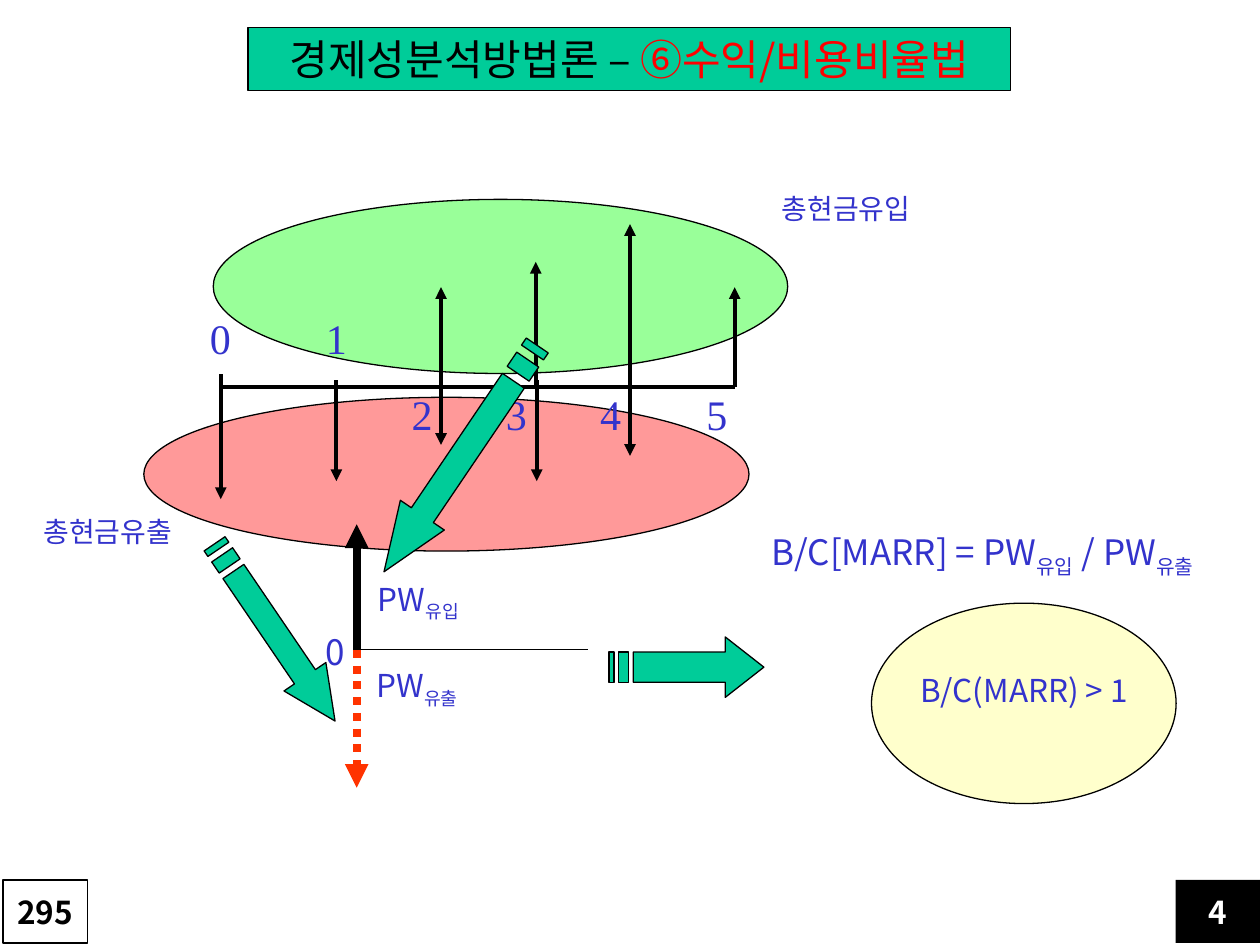
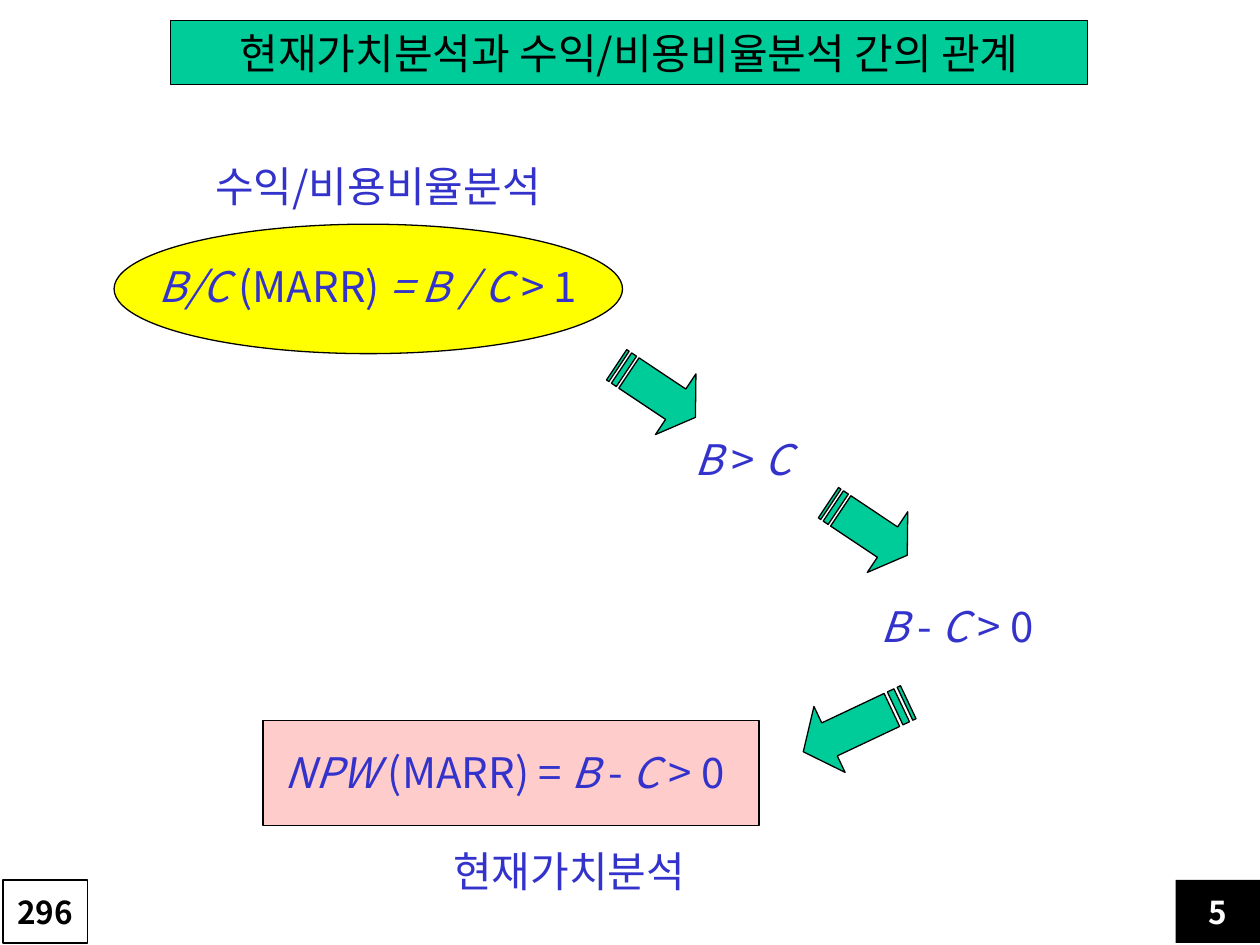
import lxml.etree
import pptx
import pptx.dml.color
import pptx.enum.dml
import pptx.enum.shapes
import pptx.enum.text
import pptx.oxml.ns
import pptx.util

Cm = pptx.util.Cm
Pt = pptx.util.Pt
qn = pptx.oxml.ns.qn
color = pptx.dml.color.RGBColor.from_string
SHAPE = pptx.enum.shapes.MSO_SHAPE
ANCHOR = pptx.enum.text.MSO_ANCHOR
ALIGN = pptx.enum.text.PP_ALIGN

theme = {
    "font": "Noto Sans CJK KR", "digit_font": "Times New Roman",
    "black": "000000", "white": "FFFFFF", "text": "3333CC", "accent": "00CC99",
    "highlight": "FF0000", "outflow_arrow": "FF3300", "inflow": "99FF99",
    "outflow": "FF9999", "result": "FFFFCC", "ratio": "FFFF00", "worth": "FFCCCC",
    "large": 24, "formula": 20, "body": 18, "label": 16,
    "hairline": 0.75, "cash_line": 2.25, "worth_line": 4.5,
}


def write(shape, spans, size, ink="text", font="font", bold=False,
          align=ALIGN.LEFT, anchor=ANCHOR.TOP, tabs=()):
    frame = shape.text_frame
    settings = {"word_wrap": True, "auto_size": pptx.enum.text.MSO_AUTO_SIZE.NONE,
                "vertical_anchor": anchor,
                "margin_right": Cm(0 if align == ALIGN.LEFT else 0.25)}
    for name, value in settings.items():
        setattr(frame, name, value)
    para = frame.paragraphs[0]
    para.alignment = align
    if tabs:
        stops = lxml.etree.SubElement(para._p.get_or_add_pPr(), qn("a:tabLst"))
        for stop in tabs:
            lxml.etree.SubElement(stops, qn("a:tab"), pos=str(Cm(stop)), algn="l")
    for text, mark in spans:
        span = para.add_run()
        span.text = text
        formats = {"name": theme[font], "size": Pt(theme[size]),
                   "bold": bold, "italic": mark == "italic"}
        for name, value in formats.items():
            setattr(span.font, name, value)
        span.font.color.rgb = color(theme["highlight" if mark == "highlight" else ink])
        properties = span._r.get_or_add_rPr()
        lxml.etree.SubElement(properties, qn("a:ea"), typeface=theme[font])
        if mark == "sub":
            properties.set("baseline", "-25000")


def paint(shape, fill, outlined=True):
    shape.shadow.inherit = False
    shape.fill.solid()
    shape.fill.fore_color.rgb = color(theme[fill])
    if outlined:
        shape.line.color.rgb = color(theme["black"])
        shape.line.width = Pt(theme["hairline"])
    else:
        shape.line.fill.background()


axis_y = 7.8
worth_x, worth_y = 7.19, 13.1
cash_flows = [(4.45, axis_y, 14.81, axis_y, False)]
for x, tip in [(8.89, 5.79), (10.8, 5.28), (12.7, 4.52), (14.81, 5.79)]:
    cash_flows.append((x, axis_y, x, tip, True))
for x, start, tip in [(4.45, 7.54, 10.06), (6.78, 7.67, 9.7), (8.89, 7.67, 8.97),
                      (10.82, 7.67, 9.7), (12.7, 7.67, 9.19)]:
    cash_flows.append((x, start, x, tip, True))
lines = [(*flow, "cash_line", "black") for flow in cash_flows] + [
    (worth_x, worth_y, worth_x, 10.57, True, "worth_line", "black"),
    (worth_x, worth_y, worth_x, 15.88, True, "worth_line", "outflow_arrow"),
    (worth_x, worth_y, 11.86, worth_y, False, "hairline", "black"),
]

digits = {"size": "large", "font": "digit_font"}
large, body, label = {"size": "large"}, {"size": "body"}, {"size": "label"}
B, C = ("B", "italic"), ("C", "italic")

slides = [
    {
        "title": [("경제성분석방법론 – ", ""), ("⑥수익/비용비율법", "highlight")],
        "title_at": (5, 0.55, 15.37, 1.28),
        "numbers": ("295", "4"),
        "shapes": [
            (SHAPE.OVAL, "inflow", (4.3, 4.02, 11.58, 3.51)),
            (SHAPE.OVAL, "outflow", (2.9, 8.01, 12.2, 3.1)),
            (SHAPE.OVAL, "result", (17.57, 12.16, 6.14, 4.04)),
        ],
        "lines": lines,
        "texts": [
            ((8.05, 7.7, 7.2, 1.52), [("2\t3\t4\t5", "")],
             {**digits, "tabs": (1.9, 3.8, 5.94)}),
            ((3.98, 6.17, 3.6, 1.52), [("0\t1", "")], {**digits, "tabs": (2.34,)}),
            ((15.51, 3.73, 3.35, 1.12), [("총현금유입", "")], label),
            ((0.63, 10.24, 3.35, 1.12), [("총현금유출", "")], label),
            ((6.32, 12.58, 0.91, 1.32), [("0", "")], {"size": "formula"}),
            ((7.37, 11.56, 2.31, 1.22), [("PW", ""), ("유입", "sub")], body),
            ((7.34, 13.31, 2.31, 1.22), [("PW", ""), ("유출", "sub")], body),
            ((15.3, 10.57, 9.8, 2.34),
             [("B/C[MARR] = PW", ""), ("유입", "sub"), (" / PW", ""), ("유출", "sub")],
             {"size": "formula"}),
            ((18.3, 13.41, 4.83, 1.22), [("B/C(MARR) > 1", "")], body),
        ],
        "arrows": [(6.53, 8.71, 5.51, 1.07, 124.1), (3.38, 12.24, 4.32, 1.02, 55.8),
                   (12.28, 12.84, 3.12, 1.22, 0)],
    },
    {
        "title": [("현재가치분석과 수익/비용비율분석 간의 관계", "")],
        "title_at": (3.43, 0.42, 18.5, 1.28),
        "numbers": ("296", "5"),
        "shapes": [
            (SHAPE.RECTANGLE, "worth", (5.3, 14.53, 10, 2.11)),
            (SHAPE.OVAL, "ratio", (2.3, 4.52, 10.25, 2.61)),
        ],
        "lines": [],
        "texts": [
            ((13.76, 8.61, 2.54, 1.3), [B, (" > ", ""), C], large),
            ((17.5, 11.99, 4.11, 1.3), [B, (" - ", ""), C, (" > 0", "")], large),
            ((5.49, 14.92, 9.8, 1.3),
             [("NPW ", "italic"), ("(MARR) = ", ""), B, (" - ", ""), C, (" > 0", "")], large),
            ((2.95, 5.13, 9.35, 1.3),
             [("B/C ", "italic"), ("(MARR)", ""), (" = B / C", "italic"), (" > 1", "")], large),
            ((4.09, 3.12, 7.95, 1.27), [("수익/비용비율분석", "")], large),
            ((8.89, 16.92, 5.64, 1.3), [("현재가치분석", "")], large),
        ],
        "arrows": [(12.27, 7.15, 1.91, 1.47, 33.7), (16.54, 9.93, 1.91, 1.47, 33.7),
                   (16.08, 13.92, 2.34, 1.47, 154.7)],
    },
]

arrow_head = [(5 / 32, 0.25), (0.75, 0.25), (0.75, 0), (1, 0.5),
              (0.75, 1), (0.75, 0.75), (5 / 32, 0.75)]
stripes = [[(start, 0.25), (end, 0.25), (end, 0.75), (start, 0.75)]
           for start, end in [(1 / 16, 1 / 8), (0, 1 / 32)]]

deck = pptx.Presentation()
deck.slide_width, deck.slide_height = Cm(25.4), Cm(19.05)

for content in slides:
    page = deck.slides.add_slide(deck.slide_layouts[5])

    title = page.shapes.title
    for name, value in zip(("left", "top", "width", "height"), content["title_at"]):
        setattr(title, name, Cm(value))
    paint(title, "accent")
    write(title, content["title"], "large", ink="black", align=ALIGN.CENTER)

    for kind, fill, place in content["shapes"]:
        paint(page.shapes.add_shape(kind, *map(Cm, place)), fill)

    for x1, y1, x2, y2, pointed, width, ink in content["lines"]:
        line = page.shapes.add_connector(pptx.enum.shapes.MSO_CONNECTOR.STRAIGHT,
                                         *map(Cm, (x1, y1, x2, y2)))
        line.line.color.rgb = color(theme[ink])
        line.line.width = Pt(theme[width])
        if ink == "outflow_arrow":
            line.line.dash_style = pptx.enum.dml.MSO_LINE.ROUND_DOT
        if pointed:
            lxml.etree.SubElement(line.line._get_or_add_ln(), qn("a:tailEnd"), type="triangle")
        lxml.etree.SubElement(line._element.spPr, qn("a:effectLst"))

    for place, spans, style in content["texts"]:
        write(page.shapes.add_textbox(*map(Cm, place)), spans, **style)

    for left, top, width, height, angle in content["arrows"]:
        outlines = [[(Cm(left + x * width), Cm(top + y * height)) for x, y in outline]
                    for outline in [arrow_head, *stripes]]
        builder = page.shapes.build_freeform(*outlines[0][0])
        builder.add_line_segments(outlines[0][1:], close=True)
        for outline in outlines[1:]:
            builder.move_to(*outline[0])
            builder.add_line_segments(outline[1:], close=True)
        arrow = builder.convert_to_shape()
        arrow.rotation = angle
        paint(arrow, "accent")

    for number, left, fill, ink in zip(content["numbers"], (0.06, 23.7),
                                       ("white", "black"), ("black", "white")):
        box = page.shapes.add_shape(SHAPE.RECTANGLE, *map(Cm, (left, 17.74, 1.7, 1.27)))
        paint(box, fill, outlined=fill == "white")
        write(box, [(number, "")], "body", ink=ink, bold=True,
              align=ALIGN.CENTER, anchor=ANCHOR.MIDDLE)

deck.save("out.pptx")
